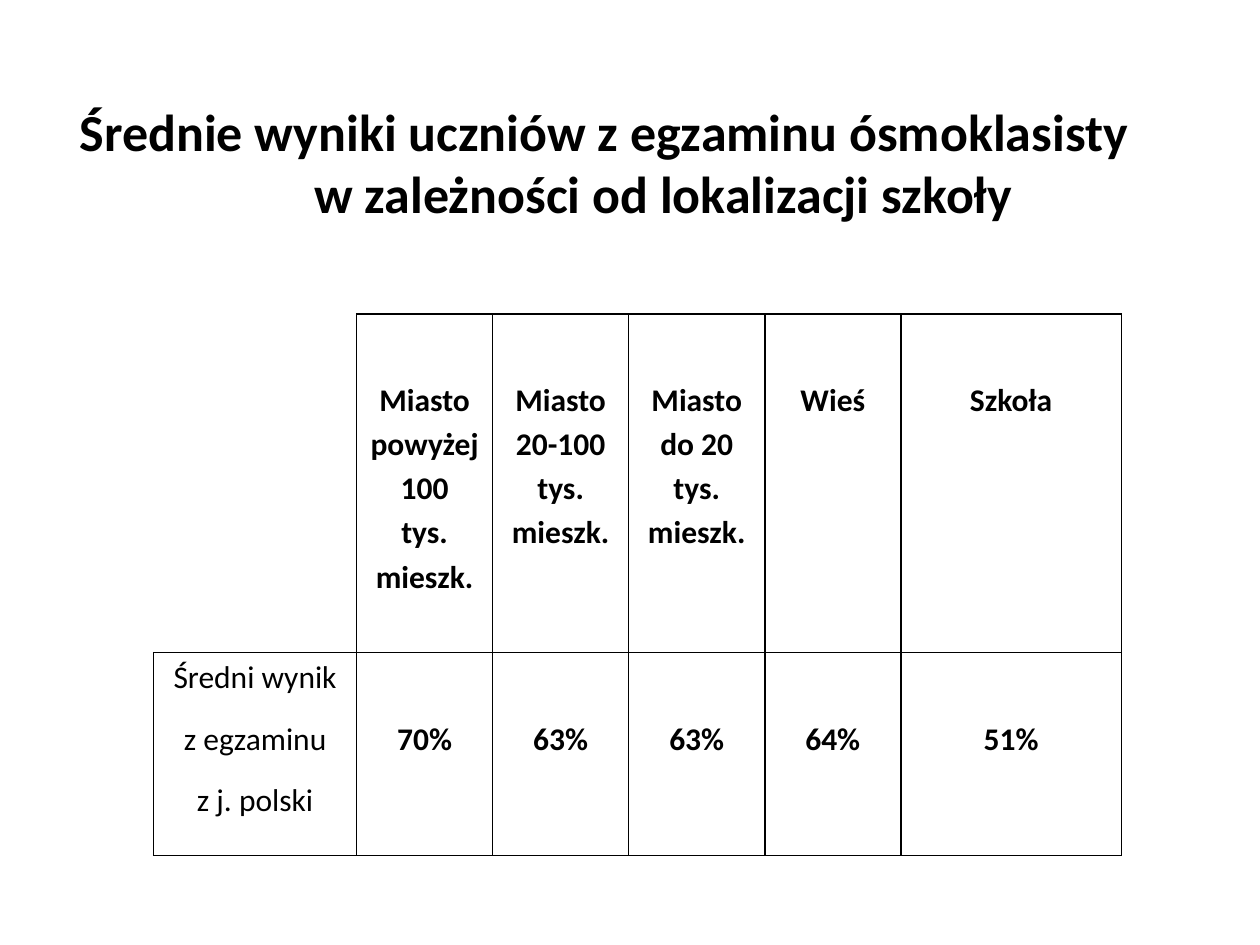
from lxml import etree
from pptx import Presentation
from pptx.dml.color import RGBColor
from pptx.enum.text import PP_ALIGN
from pptx.oxml.ns import qn
from pptx.util import Inches, Pt

FONT = "Calibri"
BLACK = "000000"
TITLE = [  # text, left indent, right indent
    ("Średnie wyniki uczniów z egzaminu ósmoklasisty", 0, 0.4),
    ("w zależności od lokalizacji szkoły", 0.54, 0),
]
HEADERS = ["Miasto powyżej\v100\vtys.\vmieszk.", "Miasto 20-100 tys. mieszk.",
           "Miasto do 20 tys. mieszk.", "Wieś", "Szkoła"]
ROW_LABEL = "Średni wynik\nz egzaminu\nz j. polski"
RESULTS = ["70%", "63%", "63%", "64%", "51%"]
COL_WIDTHS = [1.61, 1.08, 1.08, 1.08, 1.08, 1.75]
ROW_HEIGHTS = [2.69, 1.61]
ONE_LINE = 0.49  # height of one table line with its spacing


def color(value):
    return RGBColor.from_string(value)


def style_paragraph(p, size, bold):
    p.alignment = PP_ALIGN.CENTER
    p.font.name = FONT
    p.font.size = Pt(size)
    p.font.bold = bold
    p.font.color.rgb = color(BLACK)


def add_title(slide, left, top, width, height):
    box = slide.shapes.add_textbox(Inches(left), Inches(top), Inches(width), Inches(height))
    tf = box.text_frame
    tf.word_wrap = True
    tf.margin_top = Inches(0.49)
    for i, (text, indent_left, indent_right) in enumerate(TITLE):
        p = tf.paragraphs[0] if i == 0 else tf.add_paragraph()
        p.text = text
        style_paragraph(p, 29.7, True)
        pPr = p._p.get_or_add_pPr()
        pPr.set("marL", str(Inches(indent_left)))
        pPr.set("marR", str(Inches(indent_right)))


def set_borders(cell, visible):
    """Draw the sides named in visible (of L, R, T, B) and clear the others."""
    tcPr = cell._tc.get_or_add_tcPr()
    for side in "LRTB":
        ln = etree.SubElement(tcPr, qn(f"a:ln{side}"), w=str(Pt(1)))
        if side in visible:
            fill = etree.SubElement(ln, qn("a:solidFill"))
            etree.SubElement(fill, qn("a:srgbClr"), val=BLACK)
        else:
            etree.SubElement(ln, qn("a:noFill"))


def fill_cell(cell, text, bold, top_gap):
    cell.margin_left = cell.margin_right = Inches(0.05)
    cell.margin_top, cell.margin_bottom = Inches(top_gap), 0
    cell.text_frame.text = text
    for p in cell.text_frame.paragraphs:
        style_paragraph(p, 18, bold)
        p.line_spacing = 1.15
        p.space_after = Pt(10)


def add_results_table(slide, left, top):
    rows = [[""] + HEADERS, [ROW_LABEL] + RESULTS]
    frame = slide.shapes.add_table(len(rows), len(COL_WIDTHS), Inches(left), Inches(top),
                                   Inches(sum(COL_WIDTHS)), Inches(sum(ROW_HEIGHTS)))
    table = frame.table
    table.first_row = table.horz_banding = False
    for column, width in zip(table.columns, COL_WIDTHS):
        column.width = Inches(width)
    for row, height in zip(table.rows, ROW_HEIGHTS):
        row.height = Inches(height)
    for r, texts in enumerate(rows):
        for c, text in enumerate(texts):
            cell = table.cell(r, c)
            is_corner = r == 0 and c == 0
            set_borders(cell, "RB" if is_corner else "LRTB")
            cell.fill.background()
            fill_cell(cell, text, bold=c > 0, top_gap=ONE_LINE if c > 0 else 0)


def main():
    prs = Presentation()
    prs.slide_width, prs.slide_height = Inches(10), Inches(7.5)
    slide = prs.slides.add_slide(prs.slide_layouts[6])
    add_title(slide, 0.5, 0.3, 9, 1.25)
    add_results_table(slide, 1.22, 2.49)
    prs.save("out.pptx")


if __name__ == "__main__":
    main()
